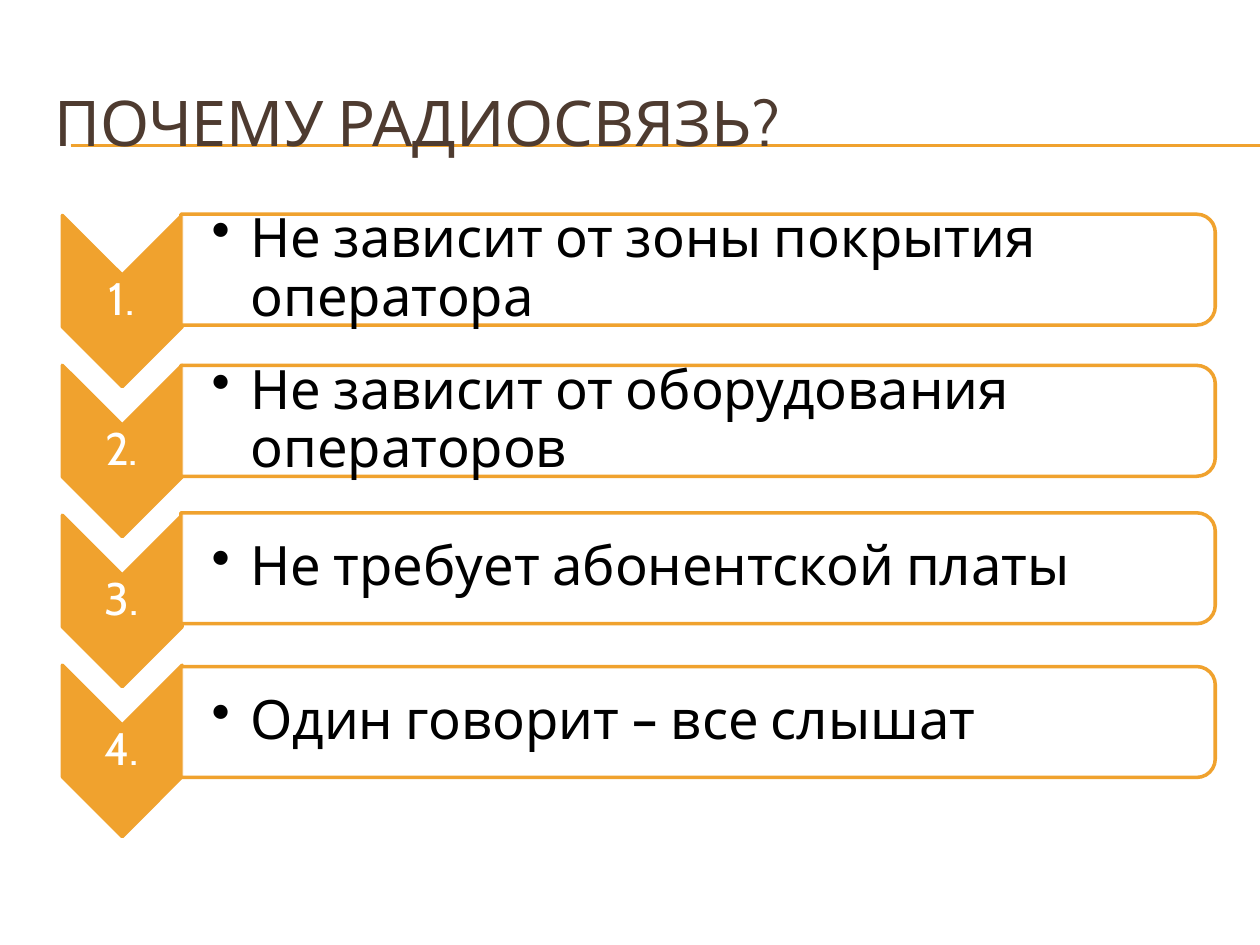
from lxml import etree
from pptx import Presentation
from pptx.dml.color import RGBColor
from pptx.enum.shapes import MSO_CONNECTOR, MSO_SHAPE
from pptx.enum.text import MSO_ANCHOR, PP_ALIGN
from pptx.oxml.ns import qn
from pptx.util import Inches, Pt

CHEVRON = MSO_SHAPE.CHEVRON
PANEL = MSO_SHAPE.ROUND_2_SAME_RECTANGLE
MIDDLE = MSO_ANCHOR.MIDDLE
LEFT, CENTER = PP_ALIGN.LEFT, PP_ALIGN.CENTER

FONT = "Cabin"
ORANGE, BROWN, WHITE, BLACK = "F0A22E", "4E3B30", "FFFFFF", "000000"

TITLE = "ПОЧЕМУ РАДИОСВЯЗЬ?"
# Reason, vertical middle of its panel
REASONS = [
    ("Не зависит от зоны покрытия оператора", 2.14),
    ("Не зависит от оборудования операторов", 3.34),
    ("Не требует абонентской платы", 4.51),
    ("Один говорит – все слышат", 5.73),
]
FIRST, STEP = 2.39, 1.19  # chevron middles
MARK_X, PANEL_X = 0.97, 5.54  # column middles
EDGE = 1.44  # left edge of the panels


def color(code):
    return RGBColor.from_string(code)


def write(box, text, size, ink, align=LEFT):
    frame = box.text_frame
    frame.word_wrap = True
    frame.vertical_anchor = MIDDLE
    para = frame.paragraphs[0]
    para.alignment = align
    run = para.add_run()
    run.text = text
    run.font.name = FONT
    run.font.size = Pt(size)
    run.font.color.rgb = color(ink)
    return para


def add_turned(shapes, kind, x, y, width, height, fill):
    """Add a shape centred on x, y and turned a quarter clockwise."""
    shape = shapes.add_shape(kind, Inches(x - width / 2), Inches(y - height / 2),
                             Inches(width), Inches(height))
    shape.rotation = 90
    shape.shadow.inherit = False
    shape.fill.solid()
    shape.fill.fore_color.rgb = color(fill)
    shape.line.color.rgb = color(ORANGE)
    shape.line.width = Pt(2)
    return shape


def add_label(shapes, x, y, width, height, inset, *style):
    """Add a text box centred vertically on y."""
    box = shapes.add_textbox(Inches(x), Inches(y - height / 2),
                             Inches(width), Inches(height))
    frame = box.text_frame
    frame.margin_left = Inches(inset)
    frame.margin_right = frame.margin_top = frame.margin_bottom = Inches(0.02)
    para = write(box, *style)
    para.line_spacing = 0.9
    return para


def add_bullet(para, indent):
    props = para._p.get_or_add_pPr()
    props.set("marL", str(Inches(indent)))
    props.set("indent", str(-Inches(indent)))
    etree.SubElement(props, qn("a:buChar")).set("char", "•")


def add_rule(slide, title, y):
    """Add a thin line behind the title."""
    rule = slide.shapes.add_connector(MSO_CONNECTOR.STRAIGHT, Inches(0.56),
                                      Inches(y), Inches(10), Inches(y))
    rule.line.color.rgb = color(ORANGE)
    rule.line.width = Pt(0.75)
    etree.SubElement(rule._element.spPr, qn("a:effectLst"))
    title._element.addprevious(rule._element)


def main():
    deck = Presentation()
    deck.slide_width, deck.slide_height = Inches(10), Inches(7.5)
    slide = deck.slides.add_slide(deck.slide_layouts[5])

    title = slide.shapes.title
    title.left, title.top = Inches(0.33), Inches(0.5)
    title.width, title.height = Inches(9.5), Inches(0.92)
    write(title, TITLE, 36, BROWN)
    for y in (1.15, 1.16):
        add_rule(slide, title, y)

    shapes = slide.shapes.add_group_shape().shapes
    for i, (reason, mid) in enumerate(REASONS):
        y = FIRST + i * STEP
        add_turned(shapes, CHEVRON, MARK_X, y, 1.36, 0.95, ORANGE)
        add_label(shapes, 0.49, y, 0.95, 0.41, 0.02,
                  f"{i + 1}.", 26, WHITE, CENTER)

        panel = add_turned(shapes, PANEL, PANEL_X, mid, 0.88, 8.21, WHITE)
        tint = panel._element.spPr.find(qn("a:solidFill"))[0]
        etree.SubElement(tint, qn("a:alpha")).set("val", "90000")
        para = add_label(shapes, EDGE, mid, 8.16, 0.8, 0.24, reason, 31, BLACK)
        add_bullet(para, 0.31)

    deck.save("out.pptx")


if __name__ == "__main__":
    main()
